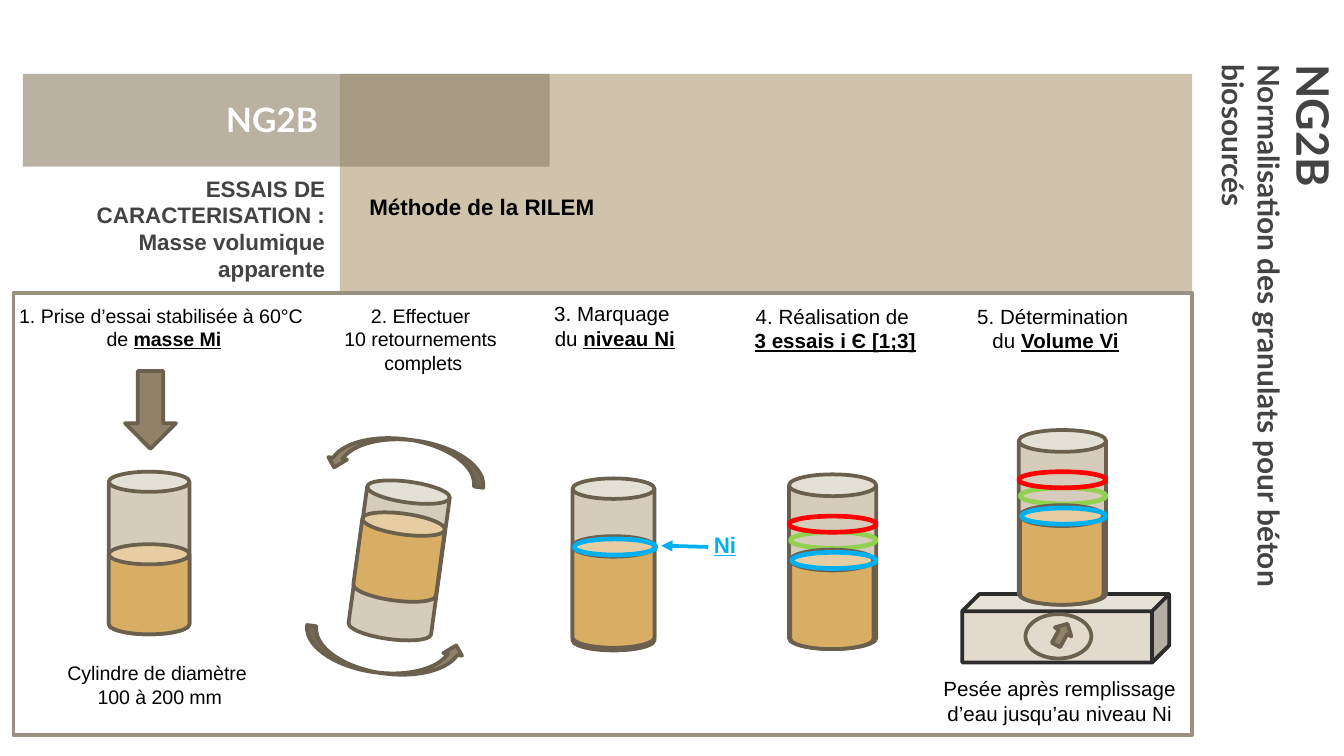
from lxml import etree
from pptx import Presentation
from pptx.dml.color import RGBColor
from pptx.enum.shapes import MSO_CONNECTOR, MSO_SHAPE as Geo
from pptx.enum.text import MSO_ANCHOR as Anchor, MSO_AUTO_SIZE as AutoSize, PP_ALIGN as Align
from pptx.oxml.ns import qn
from pptx.util import Inches, Pt

BROWN, TAUPE, GLASS, GRAIN = "6B604E", "908269", "D5CCBB", "D8AE65"
BLUE, GREEN, RED = "00B0F0", "92D050", "FF0000"
KEY = {"bold": True, "underline": True}


def color(hex_code):
    """Turn a hex string into a colour."""
    return RGBColor.from_string(hex_code)


def place(shape, box, rotation=0):
    """Set the position, size and rotation of a shape."""
    for name, value in zip(("left", "top", "width", "height"), box):
        setattr(shape, name, Inches(value))
    shape.rotation = rotation


def add_shape(shapes, geometry, box, fill=None, line=None, weight=2, rotation=0):
    """Add a preset shape with a plain fill and outline."""
    shape = shapes.add_shape(geometry, *map(Inches, box))
    shape.rotation = rotation
    shape.shadow.inherit = False
    if fill:
        shape.fill.solid()
        shape.fill.fore_color.rgb = color(fill)
    else:
        shape.fill.background()
    if line:
        shape.line.color.rgb = color(line)
        shape.line.width = Pt(weight)
    else:
        shape.line.fill.background()
    return shape


def write(frame, paragraphs, size, tint="000000", font="Arial", align=Align.CENTER,
          margin=None, indent=None, bullet=None, **options):
    """Fill a text frame with paragraphs made of (text, format) runs."""
    settings = {"word_wrap": True, "auto_size": AutoSize.NONE, "vertical_anchor": Anchor.TOP}
    if margin is not None:
        sides = ("margin_left", "margin_top", "margin_right", "margin_bottom")
        settings.update(zip(sides, margin if isinstance(margin, tuple) else (margin,) * 4))
    settings.update(options)
    for name, value in settings.items():
        setattr(frame, name, value)
    for index, runs in enumerate(paragraphs):
        paragraph = frame.add_paragraph() if index else frame.paragraphs[0]
        if indent:
            properties = paragraph._p.get_or_add_pPr()
            for name, value in zip(("marL", "indent"), indent):
                properties.set(name, str(Inches(value)))
        if bullet:
            mark, mark_color = bullet
            holder = etree.SubElement(properties, qn("a:buClr"))
            etree.SubElement(holder, qn("a:srgbClr"), val=mark_color)
            etree.SubElement(properties, qn("a:buChar"), char=mark)
        paragraph.alignment = align
        paragraph.space_before = Pt(0)
        for text, changes in runs:
            for row, part in enumerate(text.split("\n")):
                if row:
                    paragraph.add_line_break()
                if not part:
                    continue
                run = paragraph.add_run()
                run.text = part
                look = {"name": font, "size": Pt(size), "bold": False, **changes}
                for name, value in look.items():
                    setattr(run.font, name, value)
                run.font.color.rgb = color(tint)


def add_text(shapes, box, paragraphs, size, **options):
    """Add a text box."""
    write(shapes.add_textbox(*map(Inches, box)).text_frame, paragraphs, size, **options)


def add_side_title(title, box):
    """Turn the title placeholder into the vertical title inside a tall box."""
    left, top, width, height = box
    place(title, (left + (width - height) / 2, top + (height - width) / 2, height, width), 90)
    bold = {"bold": True}
    write(title.text_frame,
          [[("NG2B\n", {**bold, "size": Pt(24)}),
            ("Normalisation des granulats pour béton biosourcés", bold)]],
          16, tint="434343", font="Lato", align=Align.LEFT, margin=(Inches(0.1), 0, Inches(0.1), 0))


def add_header(shapes, subtitle, box):
    """Draw the banner, the test name and the method name."""
    left, top, width, height = box
    bold = {"bold": True}
    add_shape(shapes, Geo.RECTANGLE, (left + 2.36, top, width - 2.36, height), "CFC3AC")
    banner = add_shape(shapes, Geo.RECTANGLE, (left, top, 3.92, 0.69), TAUPE)
    tone = banner.fill._xPr.find(qn("a:solidFill"))[0]
    etree.SubElement(tone, qn("a:alpha"), val="62000")
    add_text(shapes, (left + 0.09, top + 0.09, 3.53, 0.49), [[("NG2B", bold)]], 18,
             tint="FFFFFF", font="Lato", margin=Inches(0.1), vertical_anchor=Anchor.MIDDLE)
    place(subtitle, (left + 0.02, top + 0.65, 2.33, 0.9))
    write(subtitle.text_frame,
          [[("ESSAIS DE CARACTERISATION :", bold)], [("Masse volumique apparente", bold)]],
          12, tint="434343", align=Align.RIGHT, margin=Inches(0.1),
          indent=(0.19, -0.19), bullet=("▪", "FFFFFF"))
    add_text(shapes, (left + 2.29, top + 0.84, 2.14, 0.49), [[("Méthode de la RILEM", bold)]],
             12, align=Align.JUSTIFY, indent=(0.19, 0))


def add_can(shapes, box, fill, rotation=0):
    """Draw one cylinder part."""
    add_shape(shapes, Geo.CAN, box, fill, BROWN, rotation=rotation)


def add_ring(shapes, box, tint):
    """Draw a level mark around a cylinder."""
    add_shape(shapes, Geo.OVAL, box, line=tint, weight=2.5)


def draw_filling(shapes, left, top):
    """Draw the arrow above the half-filled cylinder."""
    add_shape(shapes, Geo.DOWN_ARROW, (left + 0.12, top, 0.38, 0.58), TAUPE, BROWN)
    parts = shapes.add_group_shape().shapes
    add_can(parts, (left, top + 0.75, 0.6, 1.21), GLASS)
    add_can(parts, (left, top + 1.29, 0.6, 0.67), GRAIN)


def draw_turning(shapes, left, top):
    """Draw the tilted cylinder between two turning arrows."""
    parts, tilt = shapes.add_group_shape().shapes, 7.8
    add_can(parts, (left + 0.4, top + 0.31, 0.62, 1.18), GLASS, tilt)
    add_can(parts, (left + 0.4, top + 0.55, 0.62, 0.65), GRAIN, tilt)
    for dx, dy, turn in ((0, 1.46, tilt), (0.17, 0, tilt + 180)):
        add_shape(parts, Geo.CURVED_UP_ARROW, (left + dx, top + dy, 1.19, 0.28),
                  TAUPE, BROWN, rotation=turn)


def draw_marking(shapes, left, top):
    """Draw the cylinder with its level mark and label."""
    parts = shapes.add_group_shape().shapes
    add_can(parts, (left, top, 0.61, 1.28), GLASS)
    add_can(parts, (left, top + 0.43, 0.61, 0.83), GRAIN)
    add_ring(parts, (left + 0.01, top + 0.45, 0.61, 0.12), BLUE)
    ends = (left + 1.01, top + 0.51, left + 0.66, top + 0.5)
    pointer = parts.add_connector(MSO_CONNECTOR.STRAIGHT, *map(Inches, ends))
    pointer.line.color.rgb = color(BLUE)
    pointer.line.width = Pt(2)
    etree.SubElement(pointer.line._get_or_add_ln(), qn("a:tailEnd"), type="triangle")
    etree.SubElement(pointer._element.spPr, qn("a:effectLst"))
    add_text(shapes, (left + 0.95, top + 0.34, 0.37, 0.3), [[("Ni", KEY)]], 12,
             tint=BLUE, word_wrap=False)


def draw_levels(shapes, left, top):
    """Draw the cylinder with the three level marks."""
    parts = shapes.add_group_shape().shapes
    add_can(parts, (left, top, 0.65, 1.3), GLASS)
    add_ring(parts, (left + 0.01, top + 0.43, 0.64, 0.12), GREEN)
    add_ring(parts, (left, top + 0.31, 0.65, 0.12), RED)
    add_can(parts, (left + 0.01, top + 0.56, 0.62, 0.74), GRAIN)
    add_ring(shapes, (left + 0.02, top + 0.58, 0.63, 0.12), BLUE)


def draw_weighing(shapes, left, top):
    """Draw the marked cylinder standing on a scale."""
    parts = shapes.add_group_shape().shapes
    add_shape(parts, Geo.CUBE, (left, top + 1.22, 1.54, 0.51), "E2DBCD", "2C2C2C")
    add_shape(parts, Geo.DOWN_ARROW, (left + 0.67, top + 1.43, 0.14, 0.18),
              TAUPE, BROWN, rotation=208.4)
    add_shape(parts, Geo.OVAL, (left + 0.47, top + 1.37, 0.49, 0.33), line=BROWN)
    draw_levels(shapes, left + 0.42, top)


def add_steps(shapes, box):
    """Draw the framed panel with the five steps of the test."""
    left, top, width, height = box
    add_shape(shapes, Geo.RECTANGLE, box, "FFFFFF", "99907F")
    captions = (
        (-0.33, 0.03, 2.9, 10.5, [[("1. Prise d’essai stabilisée à 60°C \nde ", {}), ("masse Mi", KEY)]]),
        (1.95, 0.03, 2.2, 10.5, [[("2. Effectuer \n10 retournements ", {})], [("complets", {})]]),
        (3.62, 0.01, 1.71, 11, [[("3. Marquage \ndu ", {}), ("niveau Ni", KEY)]]),
        (5.26, 0.03, 1.71, 11, [[("4. Réalisation de \n", {}), ("3 essais i Є [1;3]", KEY)]]),
        (6.74, 0.03, 2.03, 11, [[("5. Détermination \ndu ", {}), ("Volume Vi", KEY)]]),
        (0.01, 2.69, 2.16, 10.5, [[("Cylindre de diamètre \n100 à 200 mm", {})]]),
        (6.66, 2.8, 2.25, 11, [[("Pesée après remplissage d’eau jusqu’au niveau Ni", {})]]),
    )
    for dx, dy, text_width, size, paragraphs in captions:
        add_text(shapes, (left + dx, top + dy, text_width, 0.47), paragraphs, size)
    drawings = ((draw_filling, 0.71, 0.58), (draw_turning, 2.16, 1.09), (draw_marking, 4.16, 1.38),
                (draw_levels, 5.77, 1.35), (draw_weighing, 7.06, 1.02))
    for draw, dx, dy in drawings:
        draw(shapes, left + dx, top + dy)


def main():
    """Build the slide and save it."""
    deck = Presentation()
    deck.slide_width, deck.slide_height = Inches(10), Inches(10) * 9 // 16
    slide = deck.slides.add_slide(deck.slide_layouts[0])
    add_side_title(slide.shapes.title, (9.03, 0.38, 0.95, 5))
    add_header(slide.shapes, slide.placeholders[1], (0.17, 0.55, 8.7, 4.75))
    add_steps(slide.shapes, (0.1, 2.18, 8.77, 3.29))
    deck.save("out.pptx")


if __name__ == "__main__":
    main()
